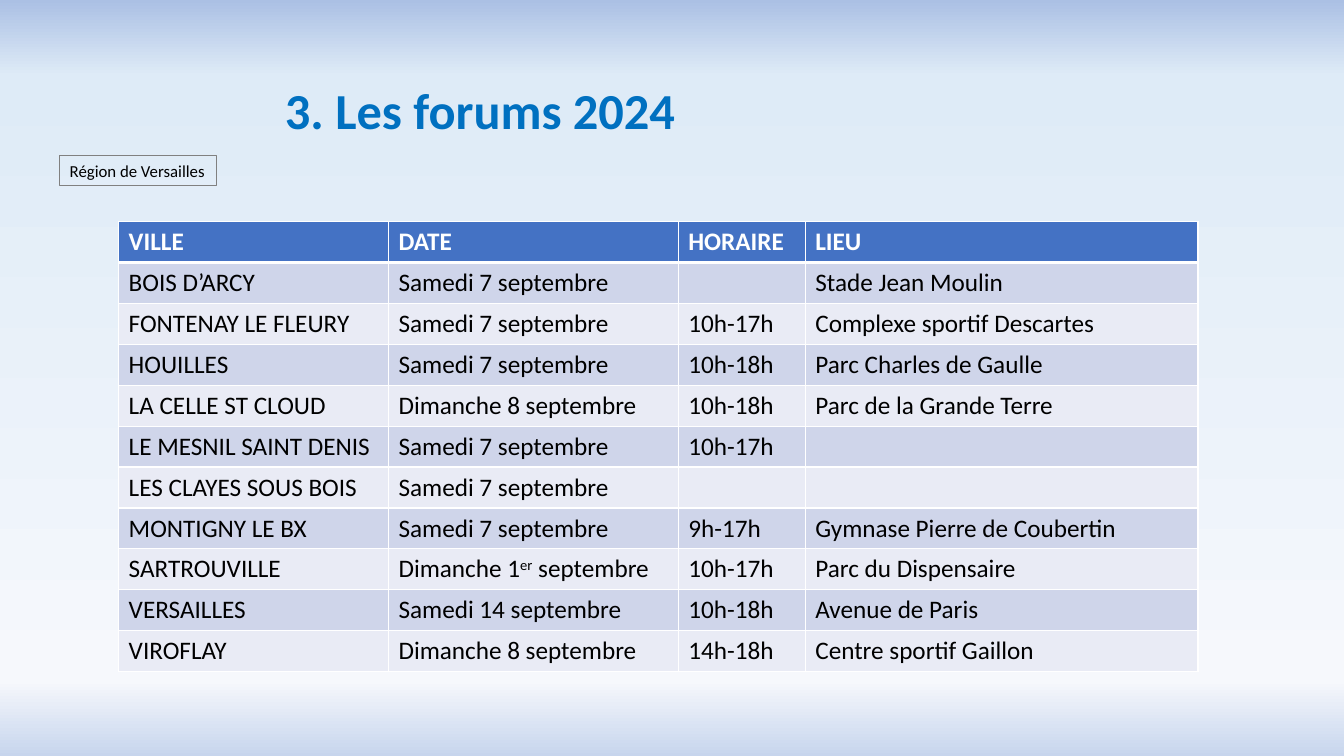
from lxml import etree
from pptx import Presentation
from pptx.dml.color import RGBColor
from pptx.enum.shapes import MSO_SHAPE
from pptx.enum.text import MSO_ANCHOR, PP_ALIGN
from pptx.oxml.ns import qn
from pptx.util import Pt

PX = 9525
RECTANGLE = MSO_SHAPE.RECTANGLE
MIDDLE = MSO_ANCHOR.MIDDLE
LEFT = PP_ALIGN.LEFT

FONT = "Calibri"
WHITE, BLACK, GREY = "FFFFFF", "000000", "808080"
TITLE_BLUE, HEADER_BLUE = "0070C0", "4472C4"
BANDS = ("CFD5EA", "E9EBF5")
BACKGROUND_STOPS = ((0, "ABC0E4"), (10, "DEEBF7"), (90, "F6F8FC"), (100, "C7D5ED"))

COLUMN_WIDTHS = (257, 276, 121, 374)
HEADERS = ("VILLE", "DATE", "HORAIRE", "LIEU")
# Text between two ^ signs is set as superscript.
FORUMS = (
    ("BOIS D’ARCY", "Samedi 7 septembre", "", "Stade Jean Moulin"),
    ("FONTENAY LE FLEURY", "Samedi 7 septembre", "10h-17h", "Complexe sportif Descartes"),
    ("HOUILLES", "Samedi 7 septembre", "10h-18h", "Parc Charles de Gaulle"),
    ("LA CELLE ST CLOUD", "Dimanche 8 septembre", "10h-18h", "Parc de la Grande Terre"),
    ("LE MESNIL SAINT DENIS", "Samedi 7 septembre", "10h-17h", ""),
    ("LES CLAYES SOUS BOIS", "Samedi 7 septembre", "", ""),
    ("MONTIGNY LE BX", "Samedi 7 septembre", "9h-17h", "Gymnase Pierre de Coubertin"),
    ("SARTROUVILLE", "Dimanche 1^er^ septembre", "10h-17h", "Parc du Dispensaire"),
    ("VERSAILLES", "Samedi 14 septembre", "10h-18h", "Avenue de Paris"),
    ("VIROFLAY", "Dimanche 8 septembre", "14h-18h", "Centre sportif Gaillon"),
)


def px(*lengths):
    return [length * PX for length in lengths]


def color(value):
    return RGBColor.from_string(value)


def write(text_frame, text, size=18, fill=BLACK, bold=False, spacing=None):
    paragraph = text_frame.paragraphs[0]
    paragraph.alignment = LEFT
    paragraph.line_spacing = spacing
    for index, part in enumerate(text.split("^")):
        run = paragraph.add_run()
        run.text = part
        run.font.name = FONT
        run.font.size = Pt(size)
        run.font.bold = bold
        run.font.color.rgb = color(fill)
        if index % 2:
            run.font._element.set("baseline", "30000")


def paint_background(slide):
    fill = slide.background.fill
    fill.gradient()
    fill.gradient_angle = 270
    stops = next(slide.element.iter(qn("a:gsLst")))
    for stop in list(stops):
        stops.remove(stop)
    for percent, value in BACKGROUND_STOPS:
        stop = etree.SubElement(stops, qn("a:gs"), pos=str(percent * 1000))
        etree.SubElement(stop, qn("a:srgbClr"), val=value)


def add_region_label(slide, left, top, width, height):
    label = slide.shapes.add_shape(RECTANGLE, *px(left, top, width, height))
    label.shadow.inherit = False
    label.fill.background()
    label.line.color.rgb = color(GREY)
    label.line.width = Pt(0.75)
    label.text_frame.word_wrap = False
    label.text_frame.vertical_anchor = MIDDLE
    write(label.text_frame, "Région de Versailles", size=12)


def add_title(slide, left, top, width, height):
    title = slide.shapes.add_textbox(*px(left, top, width, height))
    title.text_frame.word_wrap = True
    title.text_frame.vertical_anchor = MIDDLE
    write(title.text_frame, "3. Les forums 2024", size=36, fill=TITLE_BLUE,
          bold=True, spacing=0.9)


def set_borders(cell, **widths):
    properties = cell._tc.get_or_add_tcPr()
    for side in "LRTB":
        line = etree.SubElement(properties, qn("a:ln" + side),
                                w=str(Pt(widths.get(side, 1))))
        fill = etree.SubElement(line, qn("a:solidFill"))
        etree.SubElement(fill, qn("a:srgbClr"), val=WHITE)


def add_forum_table(slide, left, top, row_height):
    rows = (HEADERS,) + FORUMS
    box = px(left, top, sum(COLUMN_WIDTHS), row_height * len(rows))
    table = slide.shapes.add_table(len(rows), len(HEADERS), *box).table
    table.horz_banding = False
    for column, width in zip(table.columns, px(*COLUMN_WIDTHS)):
        column.width = width
    for row_index, row in enumerate(rows):
        is_header = row_index == 0
        for column_index, text in enumerate(row):
            cell = table.cell(row_index, column_index)
            set_borders(cell, T=3 if row_index == 1 else 1, B=3 if is_header else 1)
            cell.fill.solid()
            band = HEADER_BLUE if is_header else BANDS[(row_index - 1) % 2]
            cell.fill.fore_color.rgb = color(band)
            if text:
                write(cell.text_frame, text, fill=WHITE if is_header else BLACK,
                      bold=is_header)


def main():
    presentation = Presentation()
    presentation.slide_width, presentation.slide_height = px(1280, 720)
    slide = presentation.slides.add_slide(presentation.slide_layouts[6])
    paint_background(slide)
    add_region_label(slide, 57, 148, 149, 29)
    add_title(slide, 262, 38, 930, 139)
    add_forum_table(slide, 113, 211, 39)
    presentation.save("out.pptx")


if __name__ == "__main__":
    main()
